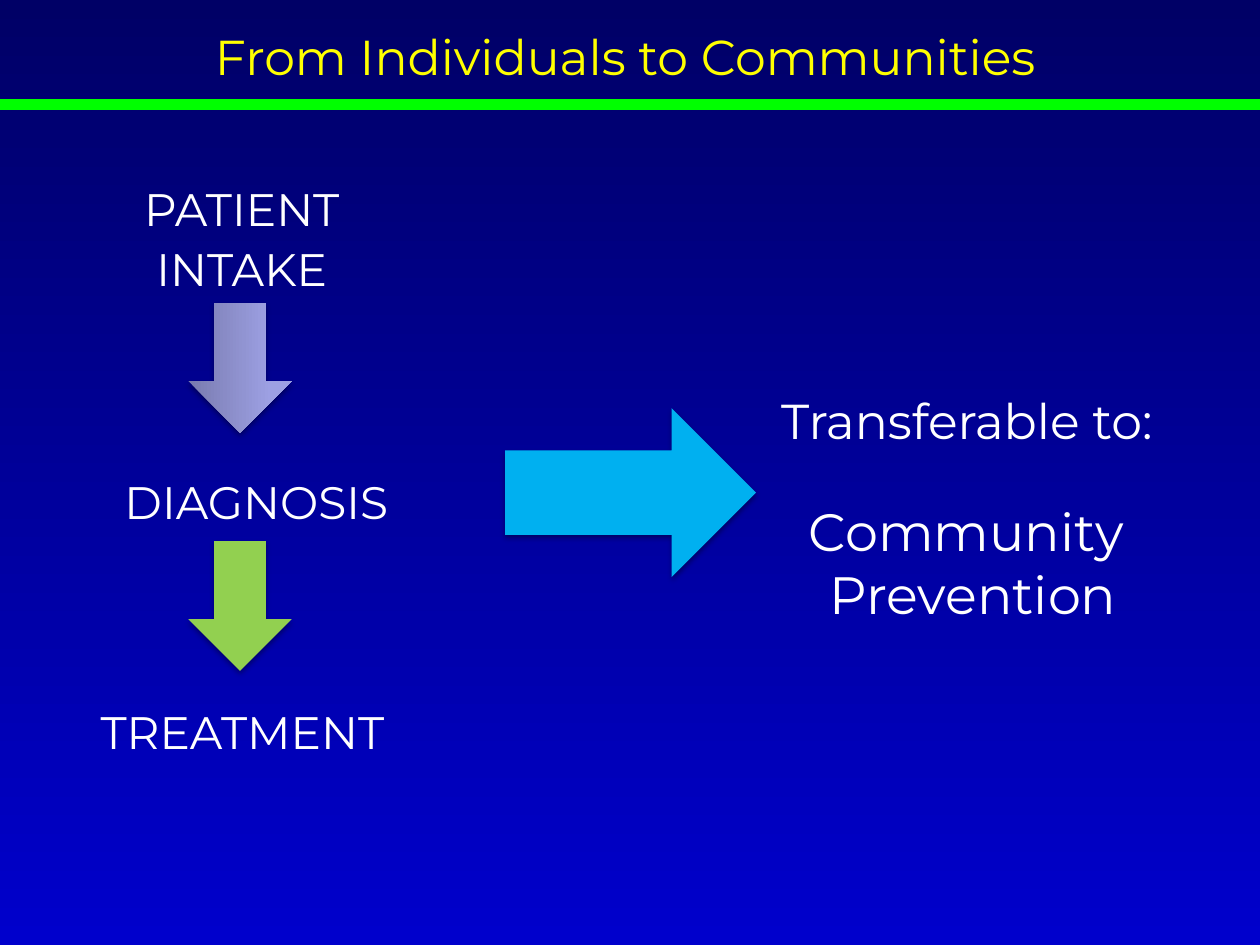
from lxml import etree
from pptx import Presentation
from pptx.dml.color import RGBColor
from pptx.enum.shapes import MSO_CONNECTOR, MSO_SHAPE
from pptx.enum.text import MSO_ANCHOR, MSO_AUTO_SIZE, PP_ALIGN
from pptx.oxml import parse_xml
from pptx.oxml.ns import nsdecls, qn
from pptx.util import Inches, Pt

RIGHT_ARROW = MSO_SHAPE.RIGHT_ARROW
STRAIGHT = MSO_CONNECTOR.STRAIGHT
TOP = MSO_ANCHOR.TOP
NO_AUTOFIT = MSO_AUTO_SIZE.NONE
CENTER = PP_ALIGN.CENTER
TITLE_ONLY = 5
FONT = "Montserrat"
WHITE = "FFFFFF"


def color(value):
    """Turn a hex string into a colour."""
    return RGBColor.from_string(value)


def fill_gradient(fill, stops, angle):
    """Fill with two (position, colour) stops at a counter-clockwise angle."""
    fill.gradient()
    fill.gradient_angle = angle
    for stop, (position, value) in zip(fill.gradient_stops, stops):
        stop.position = position
        stop.color.rgb = color(value)


def write_text(shape, paragraphs, text_color=WHITE):
    """Write centred (text, size) paragraphs into a shape."""
    frame = shape.text_frame
    frame.word_wrap = True
    frame.auto_size = NO_AUTOFIT
    frame.vertical_anchor = TOP
    frame.text = "\n".join(text for text, size in paragraphs)
    for para, (text, size) in zip(frame.paragraphs, paragraphs):
        para.alignment = CENTER
        for span in para.runs:
            span.font.name = FONT
            span.font.size = Pt(size)
            span.font.color.rgb = color(text_color)
    return frame.paragraphs


def add_text(page, box, paragraphs):
    """Add a text box at box, given in inches."""
    shape = page.shapes.add_textbox(*map(Inches, box))
    return write_text(shape, paragraphs)


def add_arrow(page, box, rotation=0):
    """Add an arrow with a soft shadow below it and return its fill."""
    arrow = page.shapes.add_shape(RIGHT_ARROW, *map(Inches, box))
    arrow.rotation = rotation
    arrow.line.fill.background()
    arrow.fill.solid()
    arrow._element.spPr.append(parse_xml(
        f'<a:effectLst {nsdecls("a")}>'
        '<a:outerShdw blurRad="40000" dist="23000" dir="5400000" rotWithShape="0">'
        '<a:srgbClr val="000000"><a:alpha val="35000"/></a:srgbClr>'
        '</a:outerShdw></a:effectLst>'))
    return arrow.fill


def add_header(page, box, rule_top):
    """Place the title and the green rule under it."""
    title = page.shapes.title
    title.left, title.top, title.width, title.height = map(Inches, box)
    para = write_text(title, [("From Individuals to Communities", 28)], "FFFF00")[0]
    para.line_spacing = 0.25
    para.space_before = Pt(0)
    para.space_after = Pt(24)
    rule = page.shapes.add_connector(
        STRAIGHT, 0, Inches(rule_top), Inches(10), Inches(rule_top))
    rule.line.color.rgb = color("00FF00")
    rule.line.width = Pt(6)
    etree.SubElement(rule._element.spPr, qn("a:effectLst"))


def add_patient_steps(page, left, top):
    """Place the three patient steps and the arrows between them."""
    intake = add_text(page, (left + 0.06, top, 2.64, 1.05), [("PATIENT INTAKE", 26)])
    intake[0].line_spacing = Pt(34)
    add_text(page, (left + 0.2, top + 2.36, 2.59, 0.54), [("DIAGNOSIS", 26)])
    add_text(page, (left, top + 4.19, 2.77, 0.54), [("TREATMENT", 26)])
    first, second = [add_arrow(page, (left + 0.85, top + offset, 1.03, 0.82), 90)
                     for offset in (1.16, 3.05)]
    fill_gradient(first, [(0, "797BAF"), (0.8, "9DA0E3")], 90)
    second.fore_color.rgb = color("92D050")


def add_transfer(page, arrow_box, text_box):
    """Place the large arrow and the community text it points to."""
    add_arrow(page, arrow_box).fore_color.rgb = color("00B0F0")
    paragraphs = add_text(page, text_box, [
        ("Transferable to: ", 28), ("Community \vPrevention", 30)])
    for para in paragraphs:
        para.space_after = Pt(24)
    paragraphs[1].space_before = Pt(4.5)


def main():
    """Build and save the slide."""
    deck = Presentation()
    deck.slide_width, deck.slide_height = Inches(10), Inches(7.5)
    page = deck.slides.add_slide(deck.slide_layouts[TITLE_ONLY])
    fill_gradient(page.background.fill, [(0, "000066"), (1, "0000CC")], 270)
    add_header(page, (0.74, 0.46, 8.44, 0.29), 0.83)
    add_patient_steps(page, 0.54, 1.35)
    add_transfer(page, (4.01, 3.24, 1.99, 1.34), (5.56, 3.05, 4.33, 2.03))
    deck.save("out.pptx")


if __name__ == "__main__":
    main()
